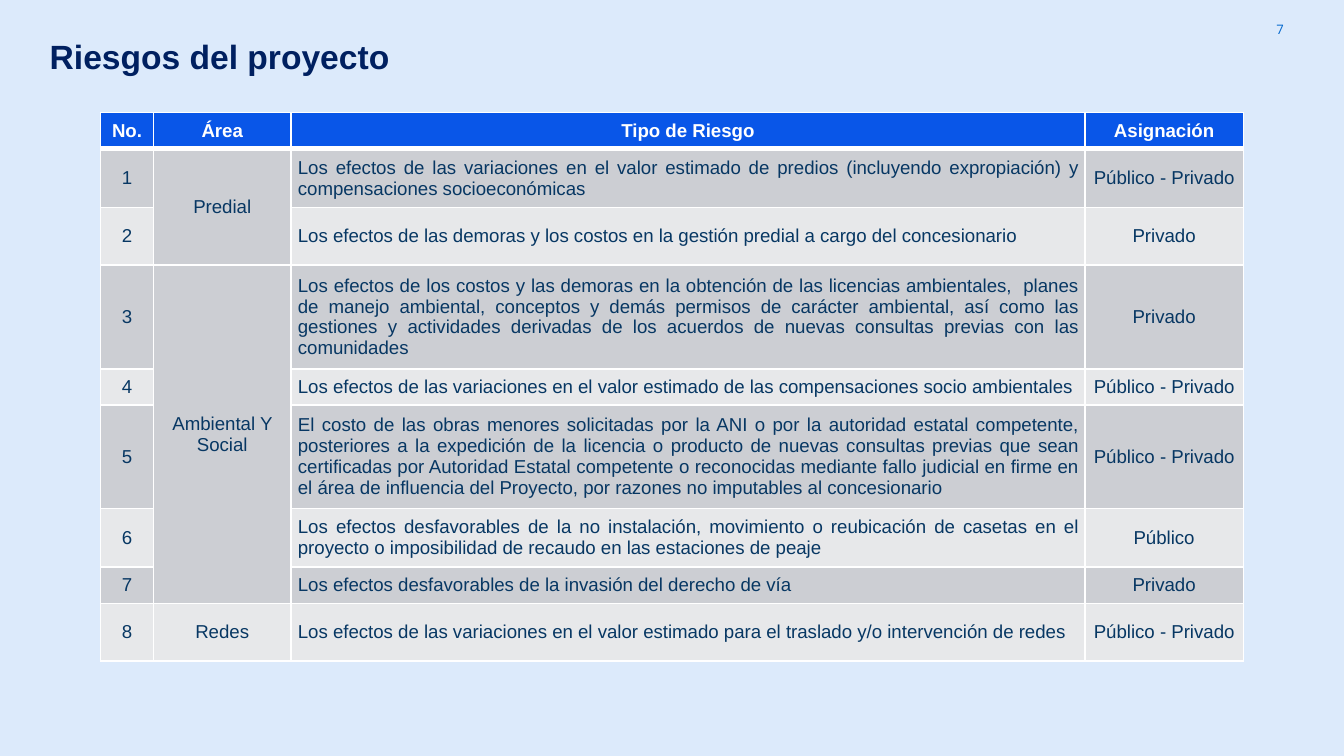
"""Build the project risk allocation slide."""
from dataclasses import dataclass

import pptx
import pptx.dml.color
import pptx.enum.text
import pptx.oxml
import pptx.oxml.ns
import pptx.slide
import pptx.table
import pptx.text.text
import pptx.util
from pptx.dml.color import RGBColor
from pptx.enum.text import MSO_ANCHOR, MSO_AUTO_SIZE, PP_ALIGN
from pptx.util import Cm, Pt

SKY = RGBColor(0xDC, 0xEA, 0xFB)
NAVY = RGBColor(0x00, 0x20, 0x60)
LINK_BLUE = RGBColor(0x00, 0x66, 0xCD)
HEADER_BLUE = RGBColor(0x09, 0x56, 0xE8)
INK = RGBColor(0x07, 0x37, 0x63)
WHITE = RGBColor(0xFF, 0xFF, 0xFF)
BANDS = (RGBColor(0xCC, 0xCE, 0xD3), RGBColor(0xE7, 0xE8, 0xEA))

HEADINGS = ("No.", "Área", "Tipo de Riesgo", "Asignación")
COLUMN_WIDTHS = (1.0, 2.6, 15.0, 3.0)
HEADER_HEIGHT = 0.68
RISK_COLUMN = 2


@dataclass(frozen=True)
class Risk:
    description: str
    allocation: str
    height: float


@dataclass(frozen=True)
class Area:
    name: str
    risks: tuple[Risk, ...]


@dataclass(frozen=True)
class TextStyle:
    size: float
    color: RGBColor
    bold: bool = False
    font: str = "Arial"
    align: PP_ALIGN = PP_ALIGN.LEFT


AREAS = (
    Area("Predial", (
        Risk("Los efectos de las variaciones en el valor estimado de predios (incluyendo "
             "expropiación) y compensaciones socioeconómicas", "Público - Privado", 1.09),
        Risk("Los efectos de las demoras y los costos en la gestión predial a cargo del "
             "concesionario", "Privado", 1.09),
    )),
    Area("Ambiental Y Social", (
        Risk("Los efectos de los costos y las demoras en la obtención de las licencias "
             "ambientales,  planes de manejo ambiental, conceptos y demás permisos de carácter "
             "ambiental, así como las gestiones y actividades derivadas de los acuerdos de "
             "nuevas consultas previas con las comunidades", "Privado", 1.83),
        Risk("Los efectos de las variaciones en el valor estimado de las compensaciones socio "
             "ambientales", "Público - Privado", 0.66),
        Risk("El costo de las obras menores solicitadas por la ANI o por la autoridad estatal "
             "competente, posteriores a la expedición de la licencia o producto de nuevas "
             "consultas previas que sean certificadas por Autoridad Estatal competente o "
             "reconocidas mediante fallo judicial en firme en el área de influencia del "
             "Proyecto, por razones no imputables al concesionario", "Público - Privado", 1.95),
        Risk("Los efectos desfavorables de la no instalación, movimiento o reubicación de "
             "casetas en el proyecto o imposibilidad de recaudo en las estaciones de peaje",
             "Público", 1.04),
        Risk("Los efectos desfavorables de la invasión del derecho de vía", "Privado", 0.65),
    )),
    Area("Redes", (
        Risk("Los efectos de las variaciones en el valor estimado para el traslado y/o "
             "intervención de redes", "Público - Privado", 1.09),
    )),
)


def write_text(frame: pptx.text.text.TextFrame, text: str, style: TextStyle) -> None:
    frame.text = text
    para = frame.paragraphs[0]
    para.alignment = style.align
    for span in para.runs:
        span.font.name = style.font
        span.font.size = Pt(style.size)
        span.font.bold = style.bold
        span.font.color.rgb = style.color


def set_margins(frame: pptx.text.text.TextFrame, across: float, down: float) -> None:
    frame.margin_left = frame.margin_right = Cm(across)
    frame.margin_top = frame.margin_bottom = Cm(down)


def add_borders(cell: pptx.table._Cell, top: float, bottom: float) -> None:
    properties = cell._tc.get_or_add_tcPr()
    for side, width in (("L", 1), ("R", 1), ("T", top), ("B", bottom)):
        properties.append(pptx.oxml.parse_xml(
            f'<a:ln{side} {pptx.oxml.ns.nsdecls("a")} w="{Pt(width)}">'
            f'<a:solidFill><a:srgbClr val="{WHITE}"/></a:solidFill></a:ln{side}>'))


def format_cell(cell: pptx.table._Cell, row: int, column: int) -> None:
    add_borders(cell, top=3 if row == 1 else 1, bottom=3 if row == 0 else 1)
    cell.fill.solid()
    cell.fill.fore_color.rgb = BANDS[(row - 1) % 2] if row else HEADER_BLUE
    cell.vertical_anchor = MSO_ANCHOR.MIDDLE
    cell.margin_left = cell.margin_right = Cm(0.13)
    cell.margin_top = cell.margin_bottom = Cm(0.13)
    justified = row > 0 and column == RISK_COLUMN
    align = PP_ALIGN.JUSTIFY if justified else PP_ALIGN.CENTER
    style = TextStyle(10, INK if row else WHITE, bold=row == 0, align=align)
    write_text(cell.text_frame, cell.text_frame.text, style)


def add_title(page: pptx.slide.Slide) -> None:
    title = page.shapes.title
    title.left, title.top, title.width, title.height = Cm(0.76), Cm(0.86), Cm(23.42), Cm(0.51)
    frame = title.text_frame
    frame.auto_size = MSO_AUTO_SIZE.NONE
    frame.vertical_anchor = MSO_ANCHOR.MIDDLE
    set_margins(frame, 0.18, 0.1)
    write_text(frame, "Riesgos del proyecto", TextStyle(18, NAVY, bold=True))
    frame.paragraphs[0].line_spacing = 0.9


def add_page_number(page: pptx.slide.Slide) -> None:
    box = page.shapes.add_textbox(Cm(22.99), Cm(0), Cm(1.52), Cm(1.09))
    frame = box.text_frame
    frame.word_wrap = True
    frame.vertical_anchor = MSO_ANCHOR.MIDDLE
    set_margins(frame, 0.25, 0.25)
    write_text(frame, "7", TextStyle(7, LINK_BLUE, font="Open Sans", align=PP_ALIGN.RIGHT))


def add_risk_table(page: pptx.slide.Slide) -> None:
    risks = [risk for area in AREAS for risk in area.risks]
    heights = [HEADER_HEIGHT, *(risk.height for risk in risks)]
    table = page.shapes.add_table(
        len(heights), len(HEADINGS), Cm(1.9), Cm(2.13),
        Cm(sum(COLUMN_WIDTHS)), Cm(sum(heights))).table
    for column, width in zip(table.columns, COLUMN_WIDTHS):
        column.width = Cm(width)
    for row, height in zip(table.rows, heights):
        row.height = Cm(height)

    for column, heading in enumerate(HEADINGS):
        table.cell(0, column).text = heading
    first = 1
    for area in AREAS:
        table.cell(first, 1).text = area.name
        for number, risk in enumerate(area.risks, first):
            table.cell(number, 0).text = str(number)
            table.cell(number, RISK_COLUMN).text = risk.description
            table.cell(number, 3).text = risk.allocation
        last = first + len(area.risks) - 1
        if last > first:
            table.cell(first, 1).merge(table.cell(last, 1))
        first = last + 1

    for row in range(len(heights)):
        for column in range(len(HEADINGS)):
            format_cell(table.cell(row, column), row, column)


def main() -> None:
    deck = pptx.Presentation()
    deck.slide_width, deck.slide_height = Cm(25.4), Cm(14.29)
    page = deck.slides.add_slide(deck.slide_layouts[5])
    page.background.fill.solid()
    page.background.fill.fore_color.rgb = SKY
    add_page_number(page)
    add_title(page)
    add_risk_table(page)
    deck.save("out.pptx")


if __name__ == "__main__":
    main()
